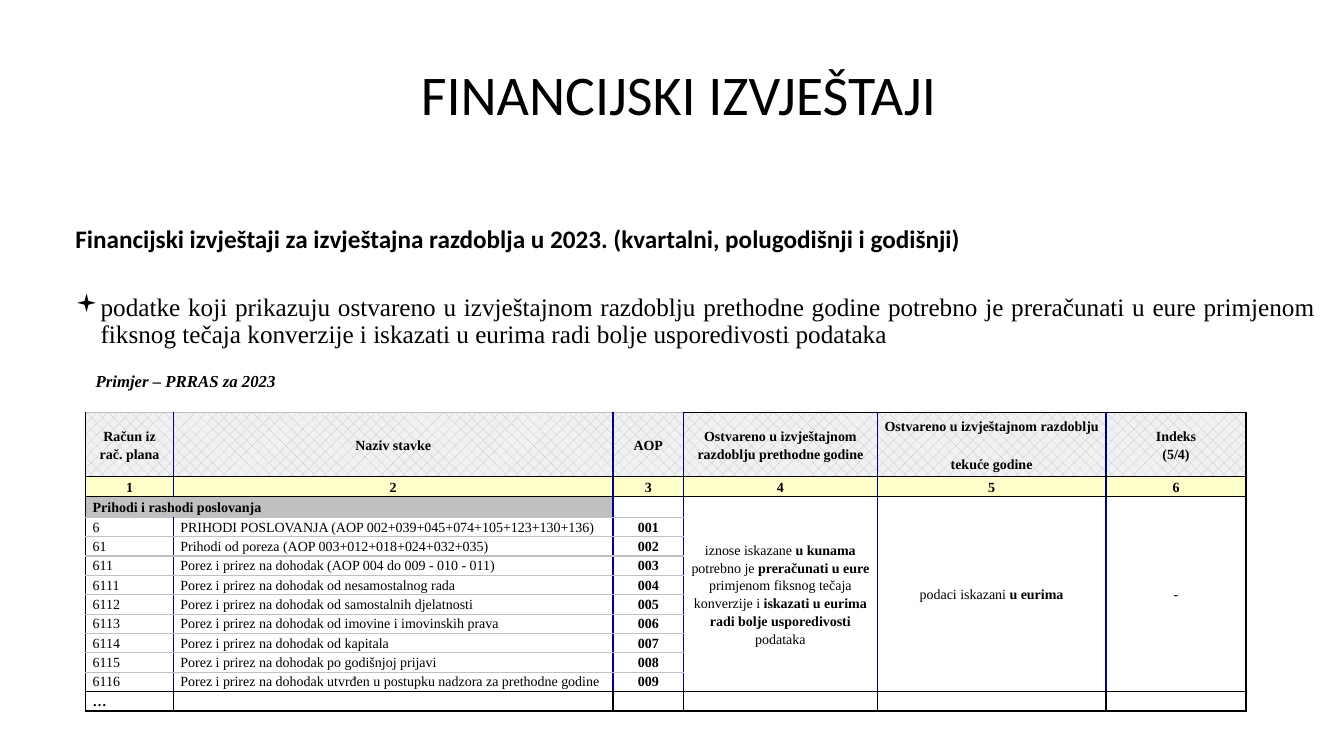
from lxml.etree import SubElement
from pptx import Presentation
from pptx.dml.color import RGBColor
from pptx.enum.dml import MSO_PATTERN
from pptx.enum.text import MSO_ANCHOR as ANCHOR, PP_ALIGN as ALIGN
from pptx.oxml.ns import qn
from pptx.util import Inches, Pt

SERIF, SANS = "Times New Roman", "Calibri"
BLACK, NAVY, GREY = "000000", "000080", "C0C0C0"
COLS = [0.87, 4.36, 0.7, 1.92, 2.27, 1.39]
ROWS = [0.64, 0.17, 0.21] + [0.17] * 10
HEADERS = ["Račun iz rač. plana", "Naziv stavke", "AOP",
           "Ostvareno u izvještajnom razdoblju prethodne godine",
           "Ostvareno u izvještajnom razdoblju \ntekuće godine", "Indeks\n(5/4)"]
SECTION = ["**Prihodi i rashodi poslovanja", "", "",
           "iznose iskazane **u kunama **potrebno je **preračunati u eure **"
           "primjenom fiksnog tečaja konverzije i **iskazati u eurima radi bolje "
           "usporedivosti **podataka",
           "podaci iskazani **u eurima", "-"]
ITEMS = [
    ("6", "PRIHODI POSLOVANJA (AOP 002+039+045+074+105+123+130+136)"),
    ("61", "Prihodi od poreza (AOP 003+012+018+024+032+035)"),
    ("611", "Porez i prirez na dohodak (AOP 004 do 009 - 010 - 011)"),
    ("6111", "Porez i prirez na dohodak od nesamostalnog rada"),
    ("6112", "Porez i prirez na dohodak od samostalnih djelatnosti"),
    ("6113", "Porez i prirez na dohodak od imovine i imovinskih prava"),
    ("6114", "Porez i prirez na dohodak od kapitala"),
    ("6115", "Porez i prirez na dohodak po godišnjoj prijavi"),
    ("6116", "Porez i prirez na dohodak utvrđen u postupku nadzora za prethodne godine"),
]


def rgb(value):
    return RGBColor.from_string(value)


def style(p, size, face, bold=False, italic=False):
    for r in p.runs:
        r.font.size, r.font.name = Pt(size), face
        r.font.bold, r.font.italic = bold, italic
        r.font.color.rgb = rgb(BLACK)


def text_box(slide, box, wrap=True):
    tf = slide.shapes.add_textbox(*map(Inches, box)).text_frame
    tf.word_wrap = wrap
    return tf


def add_title(slide, box):
    tf = text_box(slide, box)
    tf.vertical_anchor = ANCHOR.MIDDLE
    p = tf.paragraphs[0]
    p.text = "FINANCIJSKI IZVJEŠTAJI"
    p.alignment, p.line_spacing = ALIGN.CENTER, 0.9
    style(p, 40, SANS)


def add_body(slide, box):
    tf = text_box(slide, box)
    heading, bullet = tf.paragraphs[0], tf.add_paragraph()
    heading.text = ("Financijski izvještaji za izvještajna razdoblja u 2023. "
                    "(kvartalni, polugodišnji i godišnji)")
    bullet.text = ("podatke koji prikazuju ostvareno u izvještajnom razdoblju prethodne "
                   "godine potrebno je preračunati u eure primjenom fiksnog tečaja "
                   "konverzije i iskazati u eurima radi bolje usporedivosti podataka")
    for p in tf.paragraphs:
        p.alignment, p.line_spacing = ALIGN.JUSTIFY, 0.9
    style(heading, 18, SANS, bold=True)
    style(bullet, 18, SERIF)
    bullet.space_before = Pt(29)
    pPr = bullet._p.get_or_add_pPr()
    pPr.set("marL", str(Inches(0.25)))
    pPr.set("indent", str(-Inches(0.25)))
    SubElement(pPr, qn("a:buFont"), typeface="Wingdings")
    SubElement(pPr, qn("a:buChar"), char="▪")


def add_caption(slide, box):
    p = text_box(slide, box, wrap=False).paragraphs[0]
    p.text = "Primjer – PRRAS za 2023"
    style(p, 12, SERIF, bold=True, italic=True)


def cell_text(cell, text, align):
    p = cell.text_frame.paragraphs[0]
    p.alignment, p.line_spacing = align, 1.15
    for i, part in enumerate(text.split("**")):
        for j, line in enumerate(part.split("\n")):
            if j:
                p.add_line_break()
            if line:
                r = p.add_run()
                r.text = line
                r.font.size, r.font.name = Pt(10), SERIF
                r.font.bold = i % 2 == 1
                r.font.color.rgb = rgb(BLACK)
    for br in p._p.findall(qn("a:br")):
        SubElement(br, qn("a:rPr"), sz="1000")
    if not text:
        SubElement(p._p, qn("a:endParaRPr"), sz="1000")


def border_colors(row, col):
    last = row == len(ROWS) - 1
    merged = col > 2
    return {
        "L": BLACK if col == 0 or last else NAVY,
        "R": BLACK if col == len(COLS) - 1 or last else NAVY,
        "T": BLACK if merged or row in (1, 2) or last else GREY,
        "B": BLACK if merged or row < 2 or row >= len(ROWS) - 2 else GREY,
    }


def set_borders(cell, colors):
    tcPr = cell._tc.get_or_add_tcPr()
    for side, color in colors.items():
        ln = SubElement(tcPr, qn("a:ln" + side), w=str(Pt(1)))
        SubElement(SubElement(ln, qn("a:solidFill")), qn("a:srgbClr"), val=color)


def set_fill(cell, row, col):
    fill = cell.fill
    if row == 0:
        fill.patterned()
        fill.pattern = MSO_PATTERN.PERCENT_25
        fill.fore_color.rgb, fill.back_color.rgb = rgb(GREY), rgb("F1F1F1")
    elif row == 1 or (row == 2 and col < 2):
        fill.solid()
        fill.fore_color.rgb = rgb("FFFFCC" if row == 1 else GREY)
    else:
        fill.background()


def add_report_table(slide, left, top):
    box = map(Inches, (left, top, sum(COLS), sum(ROWS)))
    table = slide.shapes.add_table(len(ROWS), len(COLS), *box).table
    table.first_row = table.horz_banding = False
    for column, width in zip(table.columns, COLS):
        column.width = Inches(width)
    for line, height in zip(table.rows, ROWS):
        line.height = Inches(height)
    table.cell(2, 0).merge(table.cell(2, 1))
    for col in range(3, len(COLS)):
        table.cell(2, col).merge(table.cell(11, col))

    content = [["**" + h for h in HEADERS], [f"**{n}" for n in range(1, 7)], SECTION]
    content += [[code, name, f"**{n:03}", "", "", ""]
                for n, (code, name) in enumerate(ITEMS, 1)]
    content.append(["**…"] + [""] * 5)
    for row, texts in enumerate(content):
        for col, text in enumerate(texts):
            cell = table.cell(row, col)
            cell.margin_left = cell.margin_right = Inches(0.07)
            cell.margin_top = cell.margin_bottom = 0
            cell.vertical_anchor = ANCHOR.MIDDLE if row < 3 else ANCHOR.TOP
            cell_text(cell, text, ALIGN.CENTER if row < 2 or col > 1 else ALIGN.LEFT)
            if not cell.is_spanned:
                set_borders(cell, border_colors(row, col))
            set_fill(cell, row, col)


def main():
    prs = Presentation()
    prs.slide_width, prs.slide_height = Inches(13.33), Inches(7.5)
    slide = prs.slides.add_slide(prs.slide_layouts[6])
    add_title(slide, (1.81, 0.23, 9.84, 1.47))
    add_body(slide, (0.65, 2.2, 12.5, 1.4))
    add_caption(slide, (0.85, 3.63, 2.01, 0.3))
    add_report_table(slide, 0.85, 4.09)
    prs.save("out.pptx")


if __name__ == "__main__":
    main()
